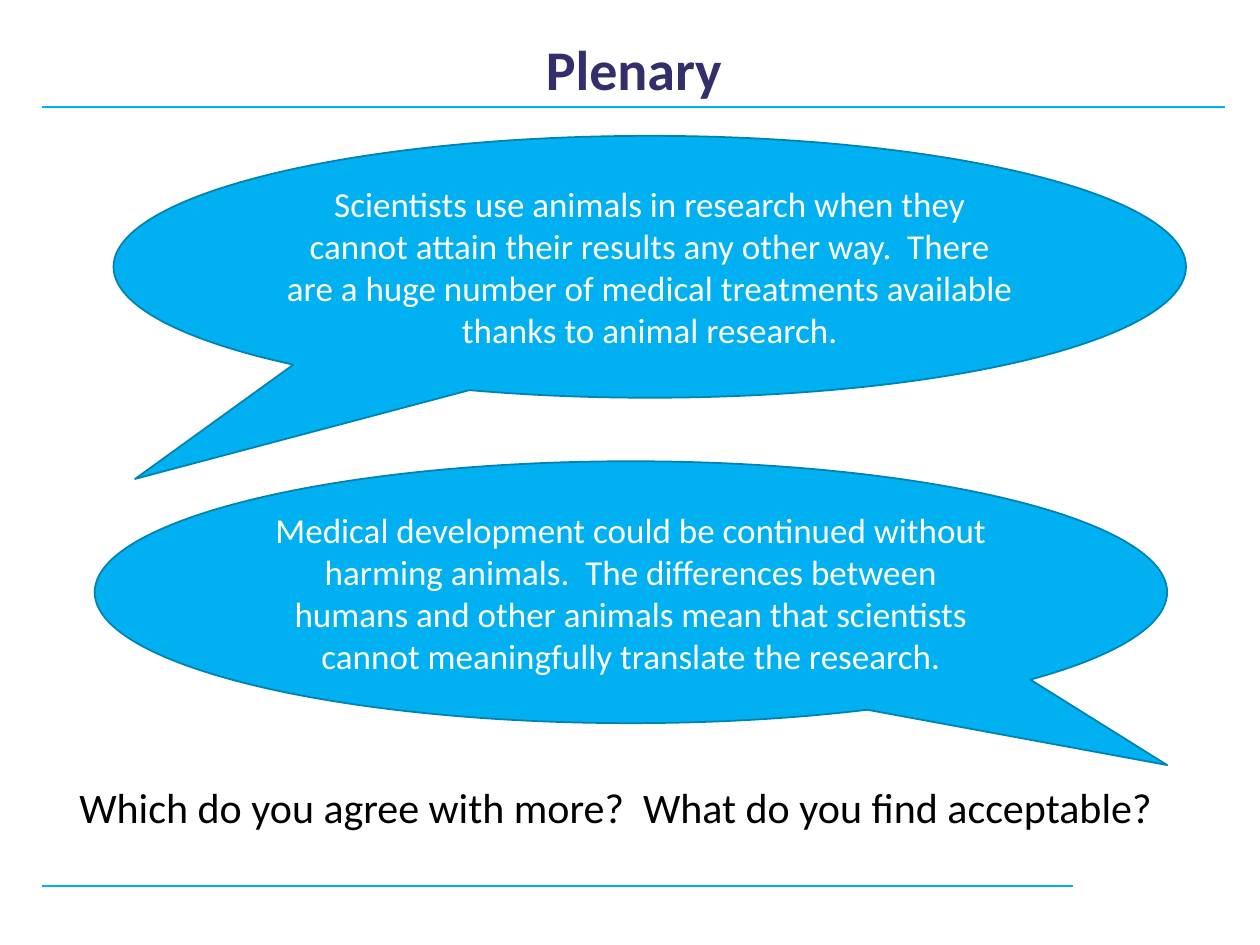
from lxml import etree
from pptx import Presentation
from pptx.dml.color import RGBColor
from pptx.enum.shapes import MSO_CONNECTOR, MSO_SHAPE
from pptx.enum.text import MSO_ANCHOR, PP_ALIGN
from pptx.oxml.ns import qn
from pptx.util import Cm, Pt

STRAIGHT = MSO_CONNECTOR.STRAIGHT
CALLOUT = MSO_SHAPE.OVAL_CALLOUT
MIDDLE = MSO_ANCHOR.MIDDLE
CENTER, LEFT = PP_ALIGN.CENTER, PP_ALIGN.LEFT

FONT = "Calibri"
SKY, SKY_DARK, NAVY = "00B0F0", "0082B2", "332F6B"
WHITE, BLACK = "FFFFFF", "000000"

RULE_LEFT = 0.84
TEXT_LEFT = 1.35
BUBBLE_WIDTH, BUBBLE_HEIGHT = 21.62, 5.28

# left, top, pointer offset (x, y), statement
OPINIONS = [
    (2.29, 2.74, (-0.48, 0.81),
     "Scientists use animals in research when they cannot attain their "
     "results any other way.  There are a huge number of medical treatments "
     "available thanks to animal research."),
    (1.91, 9.3, (0.5, 0.66),
     "Medical development could be continued without harming animals.  The "
     "differences between humans and other animals mean that scientists "
     "cannot meaningfully translate the research."),
]


def rgb(hex_colour):
    return RGBColor.from_string(hex_colour)


def write(frame, wording, size, colour, align=CENTER, bold=False, spacing=1.0):
    """Put one vertically centred paragraph into a text frame."""
    frame.word_wrap = True
    frame.vertical_anchor = MIDDLE
    paragraph = frame.paragraphs[0]
    paragraph.alignment = align
    paragraph.line_spacing = spacing
    run = paragraph.add_run()
    run.text = wording
    run.font.name = FONT
    run.font.size = Pt(size)
    run.font.bold = bold
    run.font.color.rgb = rgb(colour)


def add_rule(slide, right, y):
    rule = slide.shapes.add_connector(
        STRAIGHT, Cm(RULE_LEFT), Cm(y), Cm(right), Cm(y))
    rule.line.color.rgb = rgb(SKY)
    rule.line.width = Pt(1.5)
    etree.SubElement(rule._element.spPr, qn("a:effectLst"))


def add_text(slide, top, width, height, wording, size, colour, **style):
    box = slide.shapes.add_textbox(
        Cm(TEXT_LEFT), Cm(top), Cm(width), Cm(height))
    write(box.text_frame, wording, size, colour, **style)


def add_bubble(slide, left, top, pointer, statement):
    bubble = slide.shapes.add_shape(
        CALLOUT, Cm(left), Cm(top), Cm(BUBBLE_WIDTH), Cm(BUBBLE_HEIGHT))
    bubble.shadow.inherit = False
    for index, offset in enumerate(pointer):
        bubble.adjustments[index] = offset
    bubble.fill.solid()
    bubble.fill.fore_color.rgb = rgb(SKY)
    bubble.line.color.rgb = rgb(SKY_DARK)
    bubble.line.width = Pt(1)
    write(bubble.text_frame, statement, 20, WHITE)


def main():
    deck = Presentation()
    deck.slide_width, deck.slide_height = Cm(25.4), Cm(19.05)
    slide = deck.slides.add_slide(deck.slide_layouts[6])

    add_rule(slide, 21.64, 17.86)
    add_rule(slide, 24.69, 2.16)
    add_text(slide, 0.53, 22.86, 1.85, "Plenary", 32, NAVY,
             bold=True, spacing=0.9)
    add_text(slide, 15.7, 23.5, 1.3,
             "Which do you agree with more?  What do you find acceptable?",
             24, BLACK, align=LEFT, spacing=0.8)
    for opinion in OPINIONS:
        add_bubble(slide, *opinion)

    deck.save("out.pptx")


if __name__ == "__main__":
    main()
